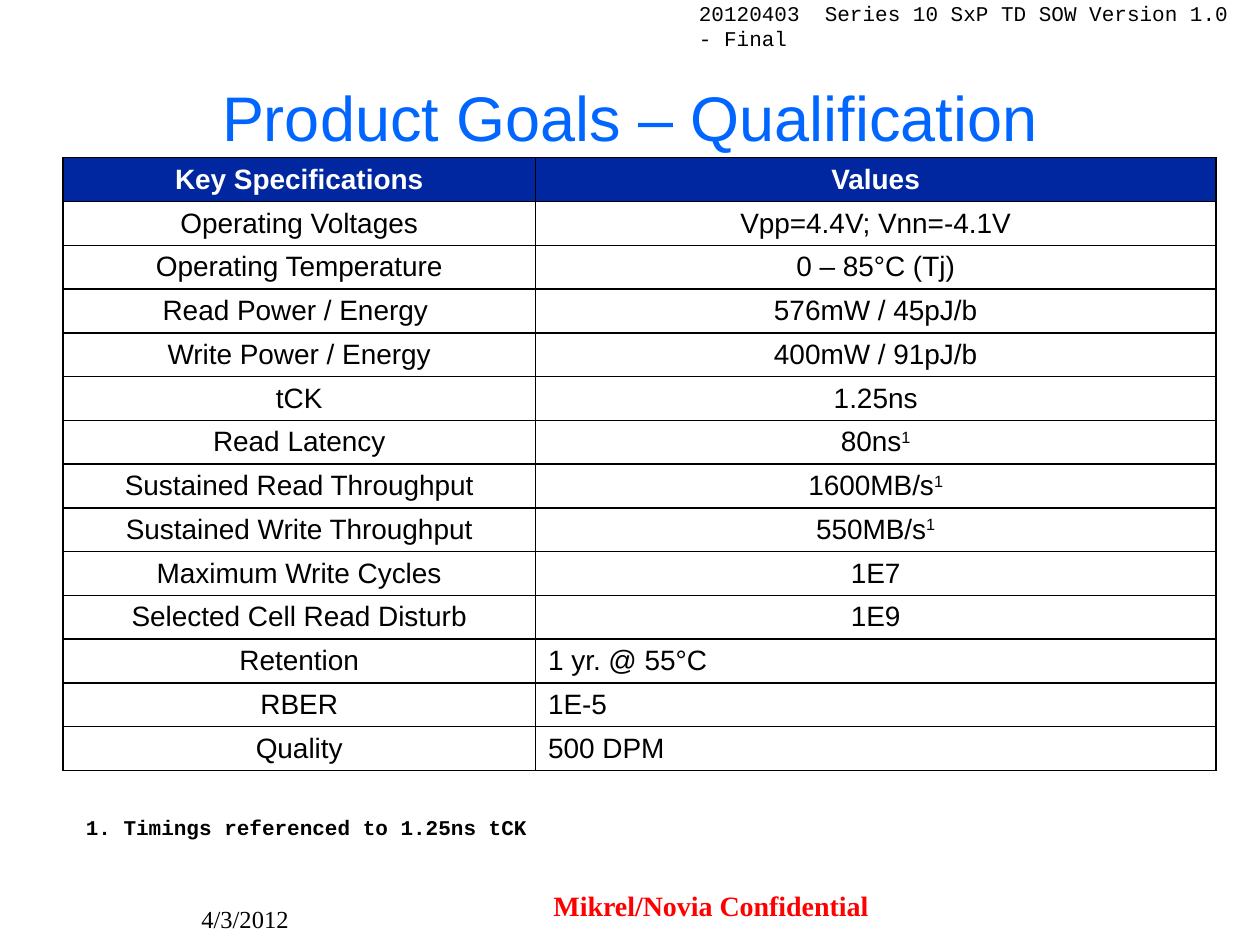
from lxml.etree import SubElement
from pptx import Presentation
from pptx.dml.color import RGBColor
from pptx.enum.text import MSO_ANCHOR, PP_ALIGN
from pptx.oxml.ns import qn
from pptx.util import Cm, Pt

HEADING = {"name": "Arial", "size": 36, "color": "0066FF", "bold": False}
TABLE_HEAD = {"name": "Arial", "size": 16, "color": "FFFFFF", "bold": True}
TABLE_BODY = {**TABLE_HEAD, "color": "000000", "bold": False}
VERSION = {"name": "Courier New", "size": 12, "color": "000000", "bold": False}
FOOTNOTE = {**VERSION, "bold": True}
DATE = {"name": "Times New Roman", "size": 14, "color": "000000", "bold": False}
NOTICE = {**DATE, "size": 16, "color": "FF0000", "bold": True}

COLUMN_SHARES = (3.75, 5.4)
# A caret in a value starts its superscript.
SPECIFICATIONS = [
    ("Key Specifications", "Values"),
    ("Operating Voltages", "Vpp=4.4V; Vnn=-4.1V"),
    ("Operating Temperature", "0 – 85°C (Tj)"),
    ("Read Power / Energy ", "576mW / 45pJ/b"),
    ("Write Power / Energy", "400mW / 91pJ/b"),
    ("tCK", "1.25ns"),
    ("Read Latency", "80ns^1"),
    ("Sustained Read Throughput", "1600MB/s^1"),
    ("Sustained Write Throughput", "550MB/s^1"),
    ("Maximum Write Cycles", "1E7"),
    ("Selected Cell Read Disturb", "1E9"),
    ("Retention", "1 yr. @ 55°C"),
    ("RBER", "1E-5"),
    ("Quality", "500 DPM"),
]
LEFT_ALIGNED = {"Retention", "RBER", "Quality"}


def rgb(color):
    return RGBColor.from_string(color)


def format_font(font, style):
    values = {"name": style["name"], "size": Pt(style["size"]), "bold": style["bold"]}
    for attribute, value in values.items():
        setattr(font, attribute, value)
    font.color.rgb = rgb(style["color"])


def write_text(text_frame, text, style, alignment=PP_ALIGN.LEFT):
    paragraph = text_frame.paragraphs[0]
    paragraph.alignment = alignment
    for index, part in enumerate(text.split("^")):
        run = paragraph.add_run()
        run.text = part
        format_font(run.font, style)
        if index:
            run.font._element.set("baseline", "30000")


def add_title(slide, box, text):
    title = slide.shapes.title
    for attribute, value in zip(("left", "top", "width", "height"), box):
        setattr(title, attribute, Cm(value))
    title.text_frame.vertical_anchor = MSO_ANCHOR.MIDDLE
    write_text(title.text_frame, text, HEADING, PP_ALIGN.CENTER)


def add_text(slide, box, text, style, alignment=PP_ALIGN.LEFT):
    text_box = slide.shapes.add_textbox(*map(Cm, box))
    text_box.text_frame.word_wrap = True
    write_text(text_box.text_frame, text, style, alignment)


def add_borders(cell, color, width):
    properties = cell._tc.get_or_add_tcPr()
    for index, side in enumerate(("lnL", "lnR", "lnT", "lnB")):
        line = SubElement(properties, qn(f"a:{side}"), w=str(Pt(width)))
        fill = SubElement(line, qn("a:solidFill"))
        SubElement(fill, qn("a:srgbClr"), val=color)
        properties.remove(line)
        properties.insert(index, line)


def add_specifications(slide, box, rows):
    left, top, width, height = box
    frame = slide.shapes.add_table(len(rows), len(COLUMN_SHARES), *map(Cm, box))
    table = frame.table
    for column, share in zip(table.columns, COLUMN_SHARES):
        column.width = Cm(width * share / sum(COLUMN_SHARES))
    for row_index, texts in enumerate(rows):
        table.rows[row_index].height = Cm(height / len(rows))
        is_head = row_index == 0
        for column_index, text in enumerate(texts):
            cell = table.cell(row_index, column_index)
            cell.vertical_anchor = MSO_ANCHOR.MIDDLE
            cell.margin_top = cell.margin_bottom = Cm(0.08)
            if is_head:
                cell.fill.solid()
                cell.fill.fore_color.rgb = rgb("00279F")
            else:
                cell.fill.background()
            add_borders(cell, "000000", 1)
            is_left = column_index == 1 and texts[0] in LEFT_ALIGNED
            write_text(cell.text_frame, text, TABLE_HEAD if is_head else TABLE_BODY,
                       PP_ALIGN.LEFT if is_left else PP_ALIGN.CENTER)


def add_footer(slide, box):
    left, top, width, height = box
    add_text(slide, (left, top + 0.31, 5.92, height - 0.31), "4/3/2012", DATE)
    add_text(slide, (left + 6.5, top, width - 6.5, 0.89),
             "Mikrel/Novia Confidential", NOTICE, PP_ALIGN.CENTER)


def main():
    presentation = Presentation()
    presentation.slide_width, presentation.slide_height = Cm(25.4), Cm(19.05)
    slide = presentation.slides.add_slide(presentation.slide_layouts[5])

    # Document version and heading
    add_text(slide, (13.84, -0.11, 11.51, 0.76),
             "20120403  Series 10 SxP TD SOW Version 1.0 - Final", VERSION)
    add_title(slide, (1.27, 0.76, 22.86, 3.18), "Product Goals – Qualification")

    # Specification table and its footnote
    add_specifications(slide, (1.27, 3.18, 23.24, 12.36), SPECIFICATIONS)
    add_text(slide, (1.48, 16.3, 10.16, 0.76),
             "1. Timings referenced to 1.25ns tCK", FOOTNOTE)

    # Date and confidentiality notice
    add_footer(slide, (3.81, 17.78, 14.55, 1.27))
    presentation.save("out.pptx")


if __name__ == "__main__":
    main()
